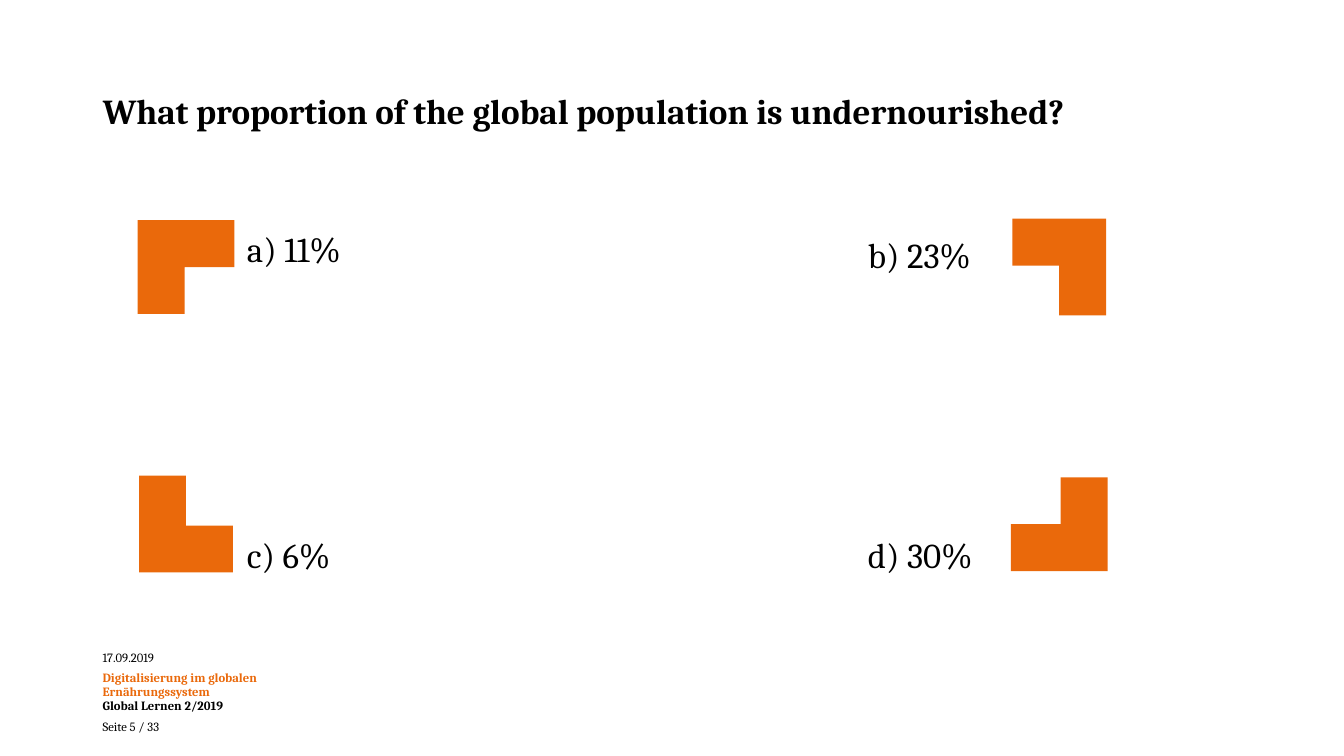
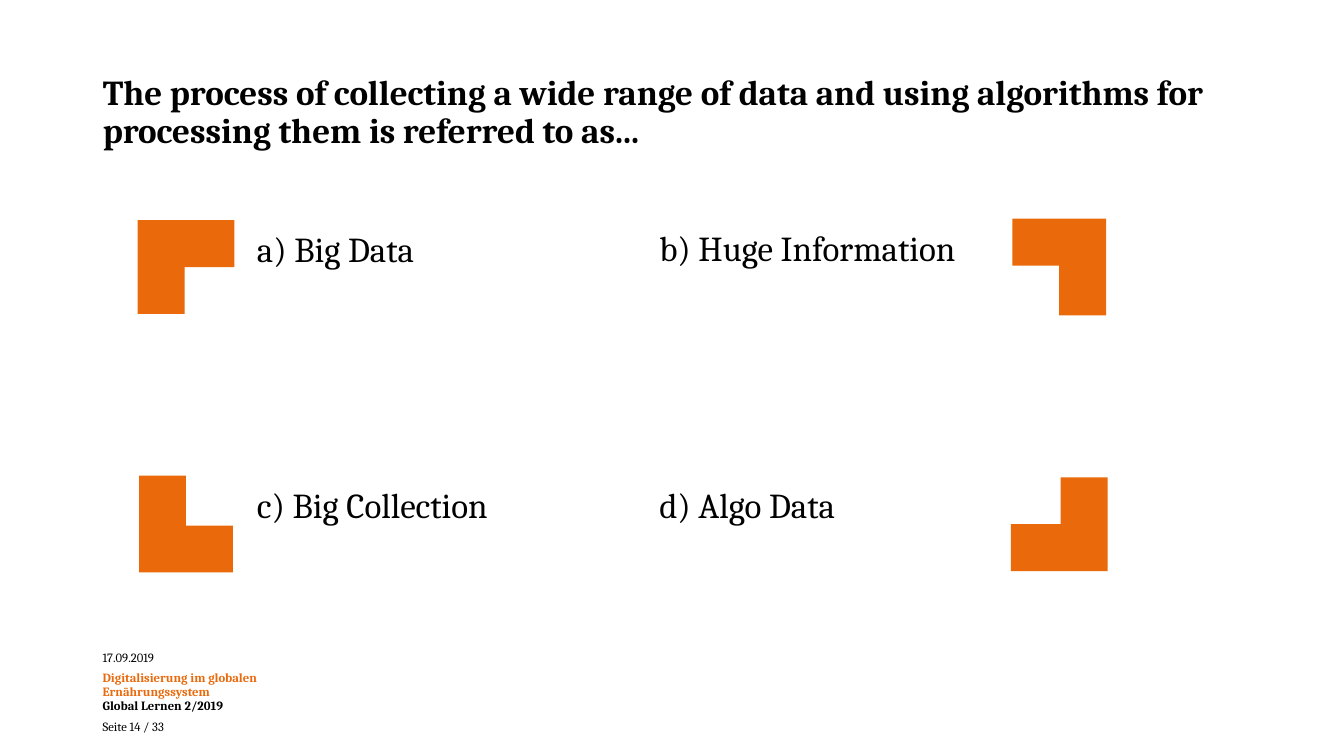
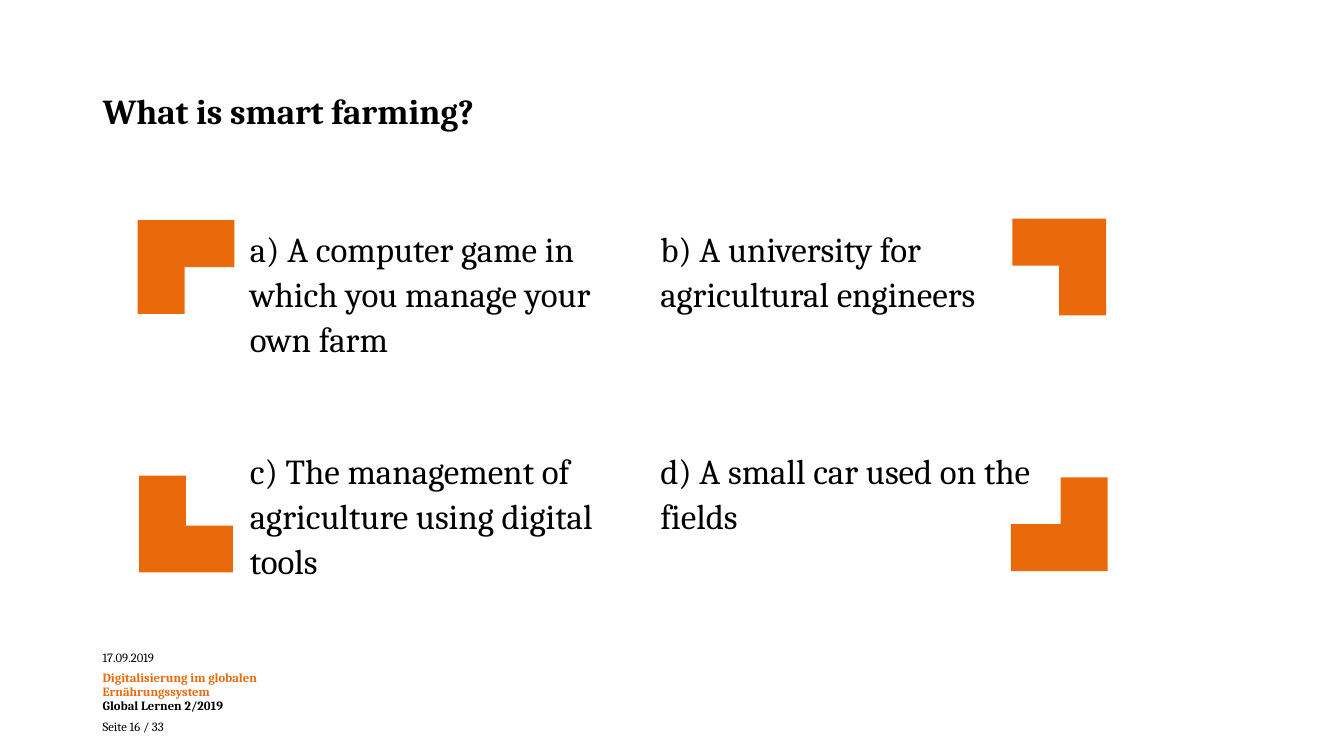
"""Build three quiz slides with corner marks, four answers and a shared footer."""
from pptx import Presentation
from pptx.dml.color import RGBColor
from pptx.enum.shapes import MSO_SHAPE as Shape
from pptx.enum.text import MSO_ANCHOR as Anchor, MSO_AUTO_SIZE as AutoSize, PP_ALIGN as Align
from pptx.util import Inches, Pt

FONT, BLACK, ORANGE = "Cambria", "000000", "EA690B"
QUESTION_SIZE, FOOTER_SIZE = 25, 9
PAGE_TOTAL = 33
MARGIN = 0.92
CORNER_SIZE = (0.93, 0.96)
CORNER_COLUMNS, CORNER_ROWS = (1.38, 10.04), (2.17, 4.72)
CORNER_TURNS = ((90, 180), (0, 270))
ANSWER_HEIGHT = 1.3

QUIZ = [
    {
        "page": 5,
        "question": "What proportion of the global population is undernourished?",
        "columns": ((2.35, 4.21), (8.51, 4.21)),
        "answers": ((("a) 11%", 2.18), ("b) 23%", 2.24)),
                    (("c) 6%", 5.21), ("d) 30%", 5.21))),
    },
    {
        "page": 14,
        "question": "The process of collecting a wide range of data and using algorithms "
                    "for processing them is referred to as...",
        "columns": ((2.45, 4.21), (6.44, 4.21)),
        "answers": ((("a) Big Data", 2.18), ("b) Huge Information", 2.17)),
                    (("c) Big Collection", 4.72), ("d) Algo Data", 4.72))),
    },
    {
        "page": 16,
        "question": "What is smart farming?",
        "columns": ((2.38, 3.76), (6.45, 3.91)),
        "answers": ((("a) A computer game in which you manage your own farm", 2.18),
                     ("b) A university for agricultural engineers", 2.18)),
                    (("c) The management of agriculture using digital tools", 4.38),
                     ("d) A small car used on the fields", 4.38))),
    },
]


def rgb(code):
    return RGBColor.from_string(code)


def box(left, top, width, height):
    return [Inches(value) for value in (left, top, width, height)]


def write(paragraph, text, size, color=BLACK, bold=False, spacing=None, after=0):
    paragraph.alignment = Align.LEFT
    paragraph.line_spacing = spacing
    paragraph.space_before, paragraph.space_after = Pt(0), Pt(after)
    run = paragraph.add_run()
    run.text = text
    run.font.name, run.font.size, run.font.bold = FONT, Pt(size), bold
    run.font.color.rgb = rgb(color)


def add_text_frame(slide, *place):
    frame = slide.shapes.add_textbox(*box(*place)).text_frame
    frame.word_wrap = True
    return frame


def add_footer(slide, page):
    lines = [
        ("17.09.2019", BLACK, False, FOOTER_SIZE / 2),
        ("Digitalisierung im globalen Ernährungssystem", ORANGE, True, 0),
        ("Global Lernen 2/2019", BLACK, True, FOOTER_SIZE / 2),
        (f"Seite {page} / {PAGE_TOTAL}", BLACK, False, 0),
    ]
    frame = add_text_frame(slide, MARGIN, 6.41, 2.6, 0.95)
    for index, (text, color, bold, after) in enumerate(lines):
        paragraph = frame.add_paragraph() if index else frame.paragraphs[0]
        write(paragraph, text, FOOTER_SIZE, color, bold, Pt(10), after)


def set_question(slide, question):
    title = slide.shapes.title
    title.left, title.top, title.width, title.height = box(MARGIN, 0.4, 11.5, 1.45)
    frame = title.text_frame
    frame.word_wrap, frame.auto_size = True, AutoSize.NONE
    frame.vertical_anchor = Anchor.MIDDLE
    write(frame.paragraphs[0], question, QUESTION_SIZE, bold=True, spacing=0.9)


def add_corners(slide):
    for top, turns in zip(CORNER_ROWS, CORNER_TURNS):
        for left, turn in zip(CORNER_COLUMNS, turns):
            corner = slide.shapes.add_shape(Shape.CORNER, *box(left, top, *CORNER_SIZE))
            corner.rotation = turn
            corner.shadow.inherit = False
            corner.fill.solid()
            corner.fill.fore_color.rgb = rgb(ORANGE)
            corner.line.fill.background()


def add_answers(slide, columns, answers):
    for row in answers:
        for (left, width), (text, top) in zip(columns, row):
            frame = add_text_frame(slide, left, top, width, ANSWER_HEIGHT)
            write(frame.paragraphs[0], text, QUESTION_SIZE, spacing=1.07)


def main():
    deck = Presentation()
    deck.slide_width, deck.slide_height = Inches(13.33), Inches(7.5)
    title_only = deck.slide_layouts.get_by_name("Title Only")
    for item in QUIZ:
        slide = deck.slides.add_slide(title_only)
        set_question(slide, item["question"])
        add_footer(slide, item["page"])
        add_corners(slide)
        add_answers(slide, item["columns"], item["answers"])
    deck.save("out.pptx")


if __name__ == "__main__":
    main()
